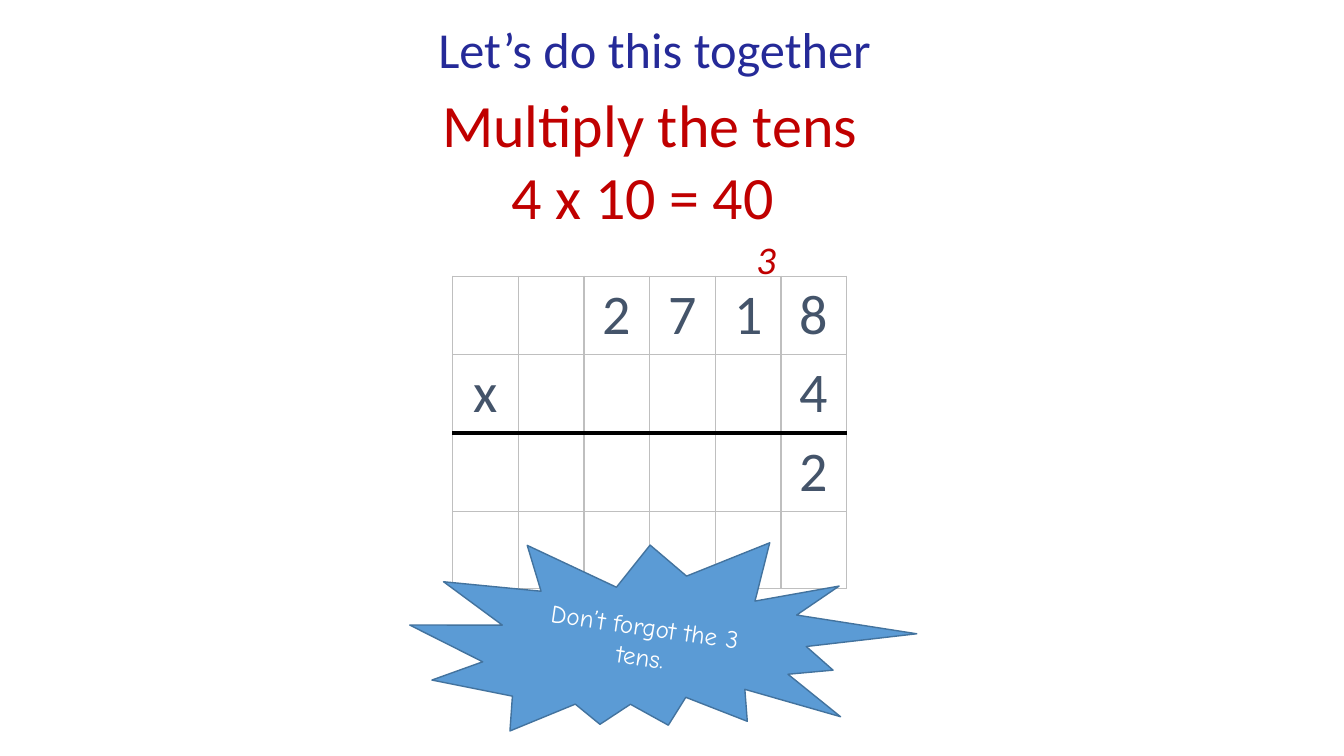
"""Build a slide that works through the tens step of 2718 x 4."""
from lxml import etree
from pptx import Presentation
from pptx.dml.color import RGBColor
from pptx.enum.shapes import MSO_SHAPE
from pptx.enum.text import MSO_ANCHOR, MSO_AUTO_SIZE, PP_ALIGN
from pptx.oxml.ns import qn
from pptx.util import Pt

CENTER, LEFT = PP_ALIGN.CENTER, PP_ALIGN.LEFT
MIDDLE = MSO_ANCHOR.MIDDLE
GROW = MSO_AUTO_SIZE.SHAPE_TO_FIT_TEXT
BURST = MSO_SHAPE.EXPLOSION2
RED, SLATE, GRID = "C00000", "44546A", "BFBFBF"


def color(value):
    return RGBColor.from_string(value)


def write(frame, text, size, ink, font="Calibri", align=CENTER, italic=False, wrap=True):
    frame.word_wrap = wrap
    for index, line in enumerate(text.split("\n")):
        paragraph = frame.add_paragraph() if index else frame.paragraphs[0]
        paragraph.alignment = align
        run = paragraph.add_run()
        run.text = line
        run.font.name = font
        run.font.size = Pt(size)
        run.font.italic = italic
        run.font.color.rgb = color(ink)


deck = Presentation()
deck.slide_width, deck.slide_height = Pt(960), Pt(540)
slide = deck.slides.add_slide(deck.slide_layouts[6])
shapes = slide.shapes

digits = ["  2718", "x    4", "     2", "      "]
sum_grid = shapes.add_table(4, 6, Pt(323.3), Pt(197.3), Pt(281.5), Pt(221)).table
sum_grid.first_row = sum_grid.horz_banding = False
for column in sum_grid.columns:
    column.width = Pt(46.92)
for row_index, row_digits in enumerate(digits):
    sum_grid.rows[row_index].height = Pt(55.25)
    for column_index, digit in enumerate(row_digits):
        cell = sum_grid.cell(row_index, column_index)
        cell.vertical_anchor = MIDDLE
        if digit != " ":
            write(cell.text_frame, digit, 40, SLATE)
        properties = cell._tc.get_or_add_tcPr()
        for side in ("lnL", "lnR", "lnT", "lnB"):
            on_rule = (row_index, side) in ((1, "lnB"), (2, "lnT"))
            border = etree.SubElement(properties, qn(f"a:{side}"), w=str(Pt(3 if on_rule else 1)))
            paint = etree.SubElement(border, qn("a:solidFill"))
            etree.SubElement(paint, qn("a:srgbClr"), val="000000" if on_rule else GRID)
        cell.fill.background()

step = shapes.add_textbox(Pt(298.8), Pt(89.3), Pt(330.5), Pt(102.2)).text_frame
step.vertical_anchor = MIDDLE
step.margin_bottom = Pt(56)
write(step, "Multiply the tens\n4 x 10 = 40 ", 42.9, RED)

carry = shapes.add_textbox(Pt(511.9), Pt(164.2), Pt(70.6), Pt(41)).text_frame
carry.auto_size = GROW
write(carry, "3", 28, RED, italic=True)

reminder = shapes.add_shape(BURST, Pt(293), Pt(377.3), Pt(359.3), Pt(159.8))
reminder.rotation = 8.3
reminder.shadow.inherit = False
reminder.fill.solid()
reminder.fill.fore_color.rgb = color("5B9BD5")
reminder.line.color.rgb = color("43739E")
reminder.line.width = Pt(1)
reminder.text_frame.vertical_anchor = MIDDLE
write(reminder.text_frame, "Don’t forgot the 3 tens.", 18, "FFFFFF", font="Comic Neue")

heading = shapes.add_textbox(Pt(306), Pt(9.4), Pt(326.2), Pt(51)).text_frame
heading.auto_size = GROW
write(heading, "Let’s do this together", 36, "252A98", align=LEFT, wrap=False)

deck.save("out.pptx")
